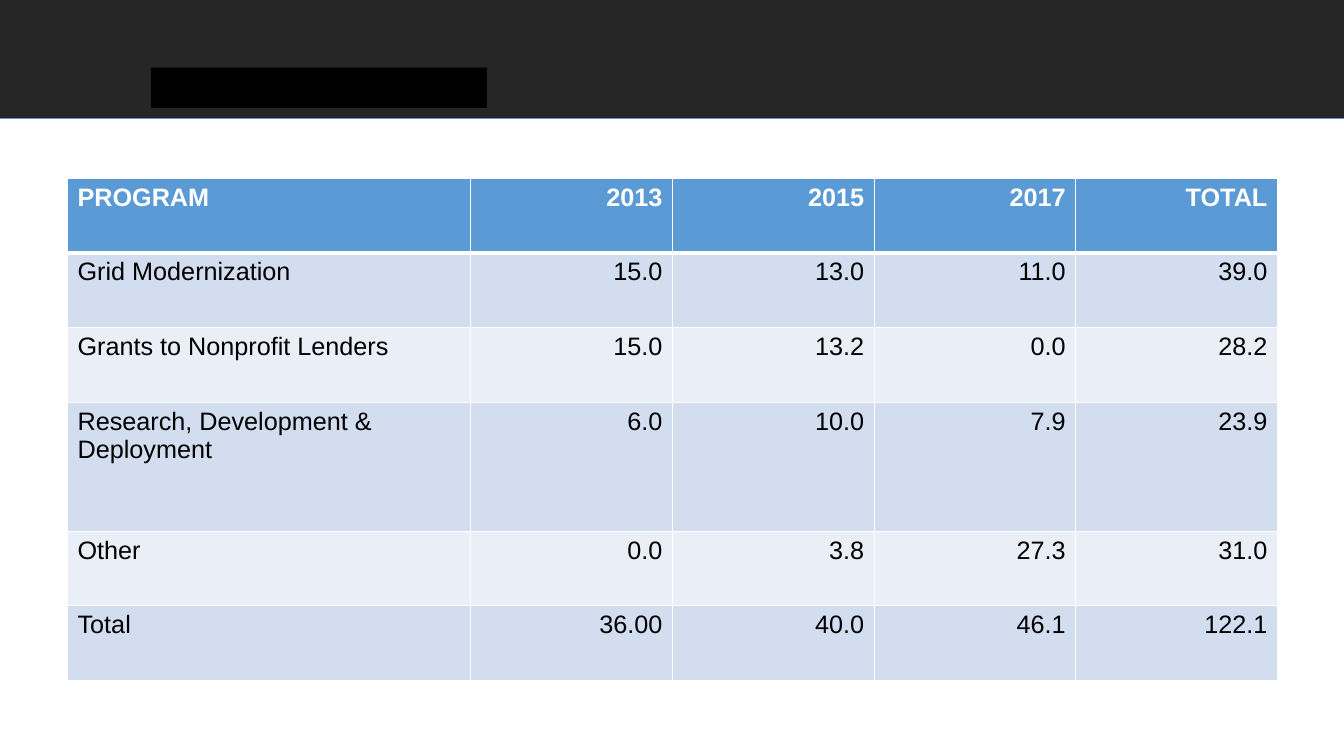
"""Build the slide with program funding by year."""
from pptx import Presentation, util as u
from pptx.dml.color import RGBColor
from pptx.enum import shapes, text
from pptx.oxml import ns
from lxml import etree

HUE = {"band": "262626", "tag": "000000", "head": "5B9BD5", "odd": "D2DEEF",
       "even": "EAEFF7", "ink": "000000", "white": "FFFFFF"}
WIDE, HIGH, BAND = 13.33, 7.5, 1.17
COLS = [4, 2, 2, 2, 2]
ROWS = [0.74, 0.74, 0.74, 1.28, 0.74, 0.74]
DATA = [
    ["PROGRAM", "2013", "2015", "2017", "TOTAL"],
    ["Grid Modernization", "15.0", "13.0", "11.0", "39.0"],
    ["Grants to Nonprofit Lenders", "15.0", "13.2", "0.0", "28.2"],
    ["Research, Development & Deployment", "6.0", "10.0", "7.9", "23.9"],
    ["Other", "0.0", "3.8", "27.3", "31.0"],
    ["Total", "36.00", "40.0", "46.1", "122.1"],
]


def write(frame, words, size=18, hue="ink", bold=False, align=text.PP_ALIGN.LEFT):
    """Put formatted text into a frame."""
    para = frame.paragraphs[0]
    para.alignment = align
    run = para.add_run()
    run.text = words
    run.font.name, run.font.size, run.font.bold = "Arial", u.Pt(size), bold
    run.font.color.rgb = RGBColor.from_string(HUE[hue])


def edge(cell, side, width):
    """Draw one white side of a cell."""
    line = etree.SubElement(cell._tc.get_or_add_tcPr(), ns.qn("a:ln" + side),
                            w=str(u.Pt(width)))
    fill = etree.SubElement(line, ns.qn("a:solidFill"))
    etree.SubElement(fill, ns.qn("a:srgbClr"), val=HUE["white"])


deck = Presentation()
deck.slide_width, deck.slide_height = u.Inches(WIDE), u.Inches(HIGH)
slide = deck.slides.add_slide(deck.slide_layouts[6])

rule = slide.shapes.add_connector(shapes.MSO_CONNECTOR.STRAIGHT, 0, u.Inches(BAND),
                                  u.Inches(WIDE), u.Inches(BAND))
rule.line.color.rgb = RGBColor.from_string(HUE["head"])
rule.line.width = u.Pt(0.5)
etree.SubElement(rule._element.spPr, ns.qn("a:effectLst"))

for hue, box in [("band", (0, 0, WIDE, BAND)), ("tag", (1.5, 0.67, 3.33, 0.4))]:
    rect = slide.shapes.add_shape(shapes.MSO_SHAPE.RECTANGLE, *map(u.Inches, box))
    rect.shadow.inherit = False
    rect.fill.solid()
    rect.fill.fore_color.rgb = RGBColor.from_string(HUE[hue])
    rect.line.fill.background()

grid = slide.shapes.add_table(len(ROWS), len(COLS), u.Inches(0.67), u.Inches(1.77),
                              u.Inches(sum(COLS)), u.Inches(sum(ROWS))).table
for col, width in zip(grid.columns, COLS):
    col.width = u.Inches(width)
for row, height in zip(grid.rows, ROWS):
    row.height = u.Inches(height)

for r, line in enumerate(DATA):
    head = r == 0
    for c, words in enumerate(line):
        cell = grid.cell(r, c)
        for side, width in [("L", 1), ("R", 1), ("T", 3 if r == 1 else 1),
                            ("B", 3 if head else 1)]:
            edge(cell, side, width)
        cell.fill.solid()
        shade = "head" if head else "odd" if r % 2 else "even"
        cell.fill.fore_color.rgb = RGBColor.from_string(HUE[shade])
        write(cell.text_frame, words, hue="white" if head else "ink", bold=head,
              align=text.PP_ALIGN.RIGHT if c else text.PP_ALIGN.LEFT)

deck.save("out.pptx")
